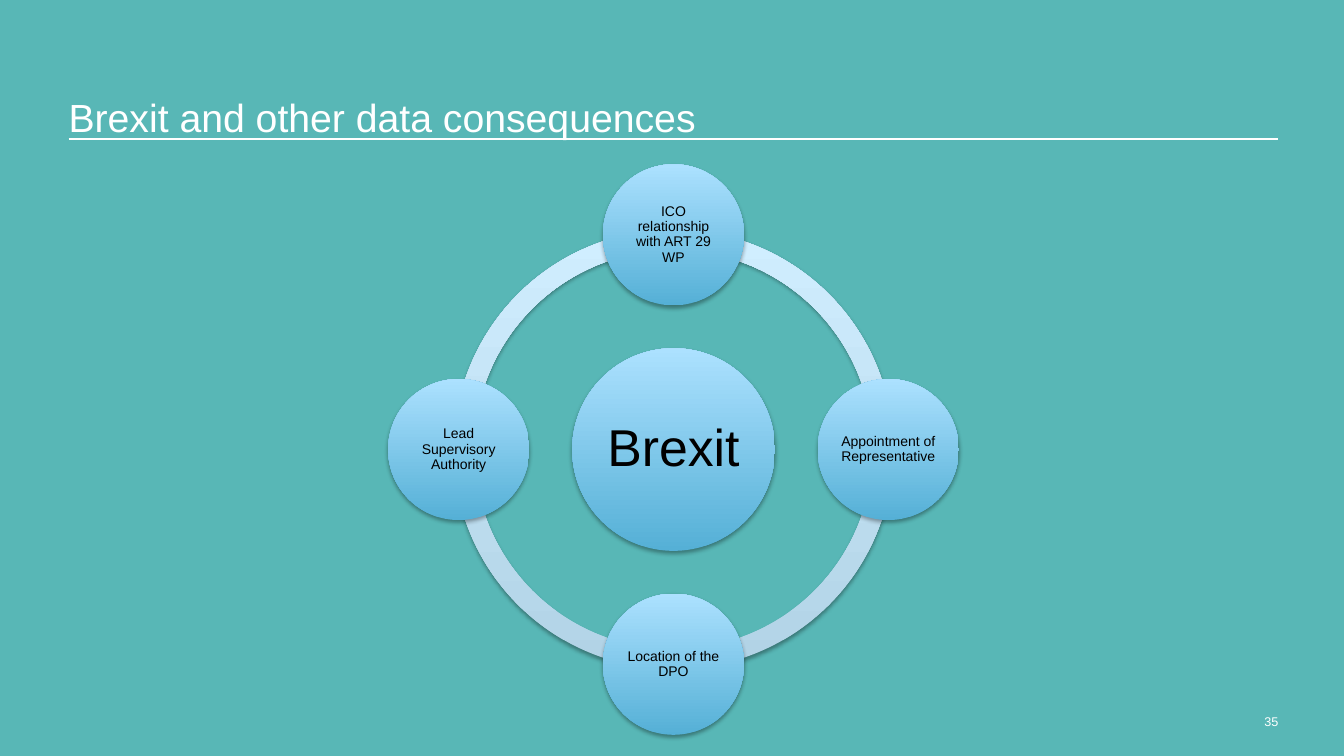
from dataclasses import dataclass
from math import cos, radians, sin

from lxml import etree
from pptx import Presentation
from pptx.dml.color import RGBColor
from pptx.enum import shapes, text
from pptx.oxml import ns, parse_xml
from pptx.util import Inches, Pt


@dataclass(frozen=True)
class Theme:
    font: str = "Arial"
    back: str = "58B7B6"
    light: str = "FFFFFF"
    dark: str = "000000"
    disc: tuple = ("55B0D6", "ACE1FF")
    ring: tuple = ("B2D3E6", "D0EEFF")
    title: int = 28
    hub: int = 37
    label: int = 10
    number: int = 9


theme = Theme()


def add_round(kind, x, y, size, tones):
    """Add a shaded, shadowed shape centred on x, y."""
    shape = slide.shapes.add_shape(
        kind, Inches(x - size / 2), Inches(y - size / 2), Inches(size), Inches(size))
    shape.fill.gradient()
    shape.fill.gradient_angle = 90
    for stop, tone in zip(shape.fill.gradient_stops, tones):
        stop.color.rgb = RGBColor.from_string(tone)
    shape.line.fill.background()
    shape.shadow.inherit = False
    effects = shape._element.spPr.find(ns.qn("a:effectLst"))
    effects.append(parse_xml(
        f'<a:outerShdw {ns.nsdecls("a")} blurRad="{Pt(3.1)}" dist="{Pt(1.8)}" '
        f'dir="5400000" rotWithShape="0"><a:srgbClr val="{theme.dark}">'
        '<a:alpha val="35000"/></a:srgbClr></a:outerShdw>'))
    return shape


def write(shape, words, size, color, align, anchor, inset=0):
    """Fill a shape with one formatted paragraph."""
    frame = shape.text_frame
    frame.text = words
    frame.word_wrap = True
    frame.auto_size = text.MSO_AUTO_SIZE.NONE
    frame.vertical_anchor = anchor
    frame.margin_left = frame.margin_right = Inches(inset)
    frame.margin_top = frame.margin_bottom = Inches(inset)
    para = frame.paragraphs[0]
    para.alignment = align
    para.font.name = theme.font
    para.font.size = Pt(size)
    para.font.color.rgb = RGBColor.from_string(color)
    return para


# Slide and background
deck = Presentation()
deck.slide_width, deck.slide_height = Inches(13.33), Inches(7.5)
slide = deck.slides.add_slide(deck.slide_layouts[5])
slide.background.fill.solid()
slide.background.fill.fore_color.rgb = RGBColor.from_string(theme.back)

# Title and rule
rule = slide.shapes.add_connector(
    shapes.MSO_CONNECTOR.STRAIGHT, Inches(0.68), Inches(1.38), Inches(12.68), Inches(1.38))
rule.line.color.rgb = RGBColor.from_string(theme.light)
rule.line.width = Pt(1.25)
etree.SubElement(rule._element.spPr, ns.qn("a:effectLst"))

title = slide.shapes.title
title.left, title.top = Inches(0.68), Inches(0.91)
title.width, title.height = Inches(11.98), Inches(0.48)
write(title, "Brexit and other data consequences", theme.title, theme.light,
      text.PP_ALIGN.LEFT, text.MSO_ANCHOR.BOTTOM)

# Ring of four quarter arcs
mid_x, mid_y, orbit = 6.68, 4.46, 2.13
for start in (180, 90, 0, 270):
    arc = add_round(shapes.MSO_SHAPE.BLOCK_ARC, mid_x, mid_y, 4.36, theme.ring)
    # Block arc angles count in 60000ths of a degree, adjustments in 100000ths
    arc.adjustments[0] = start * 0.6
    arc.adjustments[1] = (start + 90) % 360 * 0.6
    arc.adjustments[2] = 0.046

# Hub, then topics clockwise from the top
discs = [("Brexit", mid_x, mid_y, 2.01, theme.hub, 0.05)]
topics = ("ICO relationship with ART 29 WP", "Appointment of Representative",
          "Location of the DPO", "Lead Supervisory Authority")
for index, topic in enumerate(topics):
    angle = radians(index * 90 - 90)
    discs.append((topic, mid_x + orbit * cos(angle), mid_y + orbit * sin(angle),
                  1.4, theme.label, 0.01))
for words, x, y, size, points, inset in discs:
    disc = add_round(shapes.MSO_SHAPE.OVAL, x, y, size, theme.disc)
    para = write(disc, words, points, theme.dark,
                 text.PP_ALIGN.CENTER, text.MSO_ANCHOR.MIDDLE, inset)
    para.line_spacing = 0.9

# Slide number
number = slide.shapes.add_textbox(Inches(11.39), Inches(7.08), Inches(1.29), Inches(0.46))
write(number, "35", theme.number, theme.light, text.PP_ALIGN.RIGHT, text.MSO_ANCHOR.TOP)

deck.save("out.pptx")
